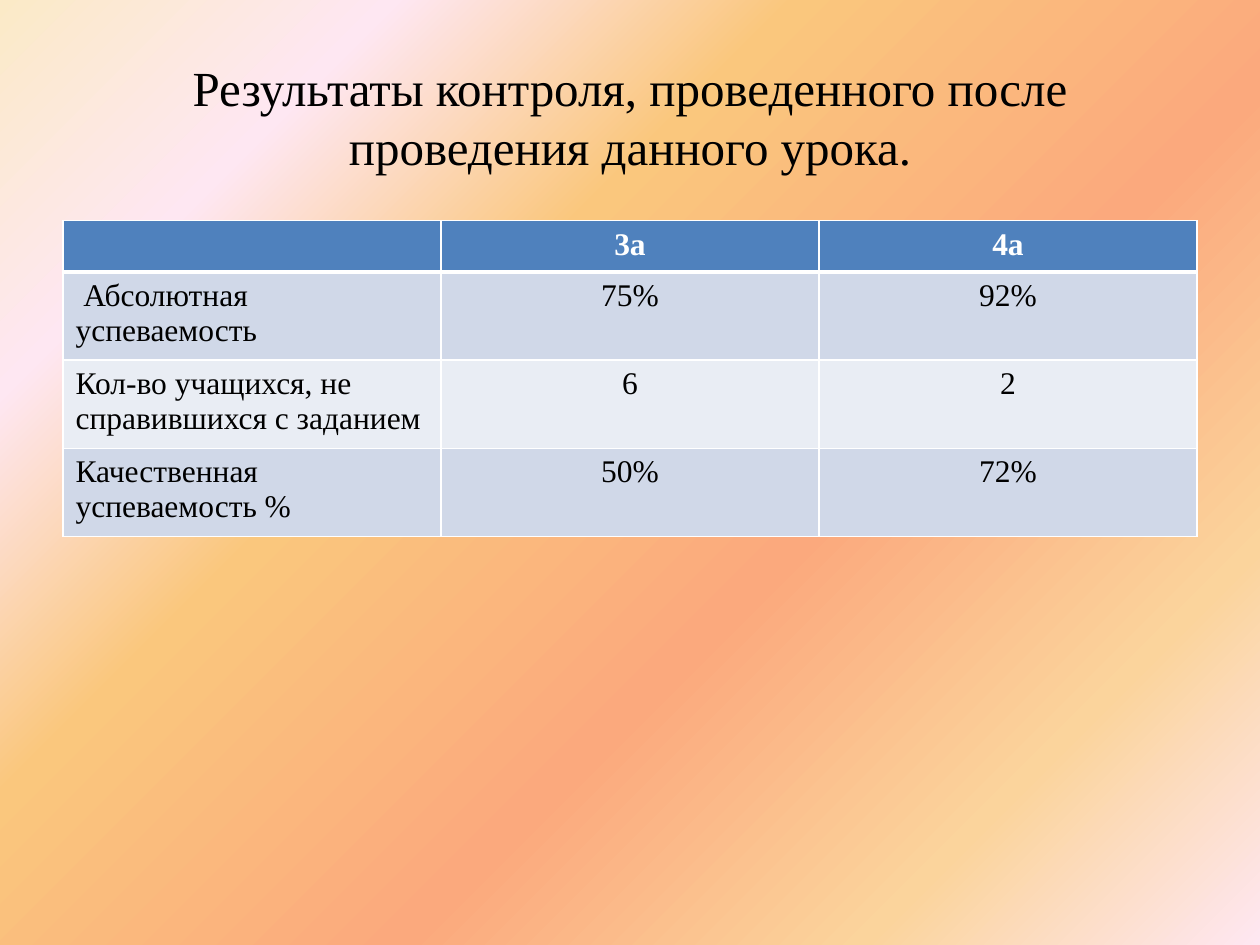
"""Build a slide with a table of test results for two classes."""
from lxml.etree import SubElement
from pptx import Presentation
from pptx.dml.color import RGBColor
from pptx.enum.text import MSO_ANCHOR as Anchor, PP_ALIGN as Align
from pptx.oxml.ns import qn
from pptx.util import Cm, Pt

TITLE = "Результаты контроля, проведенного после проведения данного урока."
ROWS = [
    ("", "3а", "4а"),
    (" Абсолютная успеваемость", "75%", "92%"),
    ("Кол-во учащихся, не справившихся с заданием", "6", "2"),
    ("Качественная успеваемость %", "50%", "72%"),
]
COLORS = {
    "text": "000000", "white": "FFFFFF", "header": "4F81BD",
    "odd": "D0D8E8", "even": "E9EDF4",
}
BACKGROUND = [
    (0, "FBEAC7"), (18, "FEE7F2"), (36, "FAC77D"),
    (61, "FBA97D"), (82, "FBD49C"), (100, "FEE7F2"),
]
FONT = "Times New Roman"
LEFT, WIDTH = 1.27, 22.86
HEADER_HEIGHT, ROW_HEIGHT = 1.03, 1.65


def paint_background(slide):
    slide.background.fill.gradient()
    gradient = next(slide.element.iter(qn("a:gradFill")))
    stops = gradient.find(qn("a:gsLst"))
    for stop in list(stops):
        stops.remove(stop)
    for position, color in BACKGROUND:
        stop = SubElement(stops, qn("a:gs"), pos=str(position * 1000))
        SubElement(stop, qn("a:srgbClr"), val=color)
    gradient.find(qn("a:lin")).set("ang", str(45 * 60000))


def write(frame, text, size, color, align, bold=False):
    para = frame.paragraphs[0]
    para.alignment = align
    if text:
        span = para.add_run()
        span.text = text
        span.font.name = FONT
        span.font.size = Pt(size)
        span.font.bold = bold
        span.font.color.rgb = RGBColor.from_string(COLORS[color])


def add_borders(cell, bottom):
    properties = cell._tc.get_or_add_tcPr()
    widths = {"a:lnL": 1, "a:lnR": 1, "a:lnT": 1, "a:lnB": bottom}
    for index, (side, width) in enumerate(widths.items()):
        line = SubElement(properties, qn(side), w=str(Pt(width)))
        fill = SubElement(line, qn("a:solidFill"))
        SubElement(fill, qn("a:srgbClr"), val=COLORS["white"])
        properties.insert(index, line)


def add_title(slide):
    box = slide.shapes.add_textbox(Cm(LEFT), Cm(0.76), Cm(WIDTH), Cm(3.18))
    frame = box.text_frame
    frame.word_wrap = True
    frame.vertical_anchor = Anchor.MIDDLE
    write(frame, TITLE, 28, "text", Align.CENTER)


def add_results(slide):
    heights = [HEADER_HEIGHT] + [ROW_HEIGHT] * (len(ROWS) - 1)
    table = slide.shapes.add_table(
        len(ROWS), len(ROWS[0]), Cm(LEFT), Cm(4.45), Cm(WIDTH), Cm(sum(heights))
    ).table
    for row, (height, texts) in enumerate(zip(heights, ROWS)):
        table.rows[row].height = Cm(height)
        header = row == 0
        fill = "header" if header else "odd" if row % 2 else "even"
        for column, text in enumerate(texts):
            cell = table.cell(row, column)
            cell.fill.solid()
            cell.fill.fore_color.rgb = RGBColor.from_string(COLORS[fill])
            add_borders(cell, 3 if header else 1)
            write(cell.text_frame, text, 18, "white" if header else "text",
                  Align.CENTER if column else Align.LEFT, header)


def main():
    deck = Presentation()
    deck.slide_width, deck.slide_height = Cm(25.4), Cm(19.05)
    slide = deck.slides.add_slide(deck.slide_layouts[6])
    paint_background(slide)
    add_title(slide)
    add_results(slide)
    deck.save("out.pptx")


if __name__ == "__main__":
    main()
